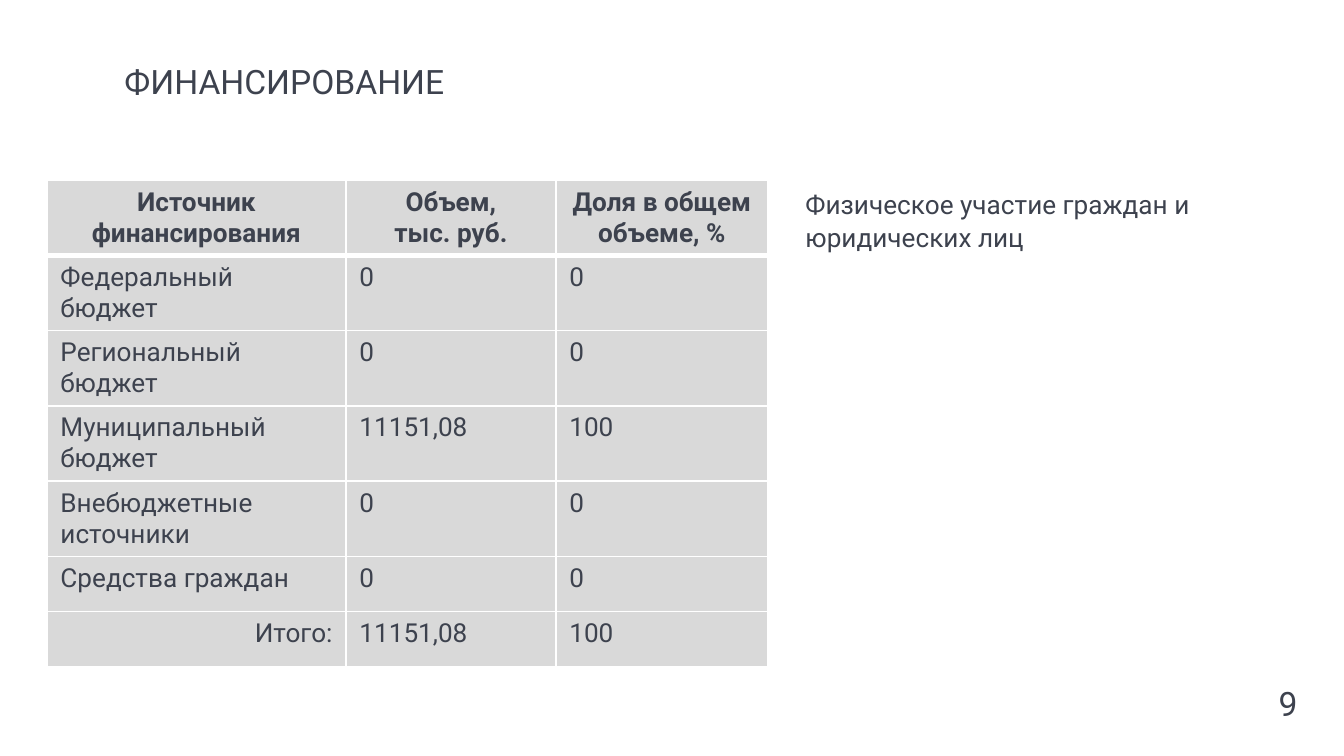
from dataclasses import dataclass

from lxml.etree import SubElement
from pptx import Presentation
from pptx.dml.color import RGBColor
from pptx.enum.text import MSO_ANCHOR as Anchor, MSO_AUTO_SIZE as AutoSize, PP_ALIGN as Align
from pptx.oxml.ns import qn
from pptx.util import Emu, Pt

PX = 914400 / 134.4


def px(n):
    return Emu(round(n * PX))


@dataclass(frozen=True)
class Theme:
    font: str = "Roboto"
    ink: str = "3D424E"
    cell: str = "D9D9D9"
    rule: str = "FFFFFF"
    title_size: int = 18
    body_size: int = 14
    thin: int = 1
    thick: int = 3


class SlideBuilder:
    def __init__(self, prs, theme):
        self.theme = theme
        self.s = prs.slides.add_slide(prs.slide_layouts[0])

    def format_text(self, tf, size, align=Align.LEFT, bold=False):
        for p in tf.paragraphs:
            p.alignment = align
            p.space_before = Pt(0)
            p.font.name = self.theme.font
            p.font.size = Pt(size)
            p.font.bold = bold
            p.font.color.rgb = RGBColor.from_string(self.theme.ink)

    def fill_frame(self, sp, text, box, size, anchor, align=Align.LEFT):
        sp.left, sp.top, sp.width, sp.height = map(px, box)
        tf = sp.text_frame
        tf.text = text
        tf.word_wrap = True
        tf.auto_size = AutoSize.NONE
        tf.vertical_anchor = anchor
        self.format_text(tf, size, align)
        return tf

    def title(self, text, box):
        self.fill_frame(self.s.shapes.title, text, box, self.theme.title_size, Anchor.MIDDLE)

    def body(self, text, box):
        tf = self.fill_frame(self.s.placeholders[1], text, box, self.theme.body_size, Anchor.TOP)
        tf.paragraphs[0].line_spacing = 1.05

    def page_number(self, text, box):
        sp = self.s.shapes.add_textbox(*map(px, box))
        self.fill_frame(sp, text, box, self.theme.title_size, Anchor.MIDDLE, Align.CENTER)

    def border(self, cell, side, width):
        ln = SubElement(cell._tc.get_or_add_tcPr(), qn(f"a:ln{side}"), w=str(Pt(width)))
        SubElement(SubElement(ln, qn("a:solidFill")), qn("a:srgbClr"), val=self.theme.rule)

    def table(self, rows, left, top, widths, row_height):
        t = self.theme
        frame = self.s.shapes.add_table(len(rows), len(widths), px(left), px(top),
                                        px(sum(widths)), px(row_height * len(rows)))
        table = frame.table
        table.horz_banding = False
        for column, width in zip(table.columns, widths):
            column.width = px(width)
        for i, row in enumerate(rows):
            for j, text in enumerate(row):
                cell = table.cell(i, j)
                cell.text = text
                for side in "LRTB":
                    under_header = (i, side) in ((0, "B"), (1, "T"))
                    self.border(cell, side, t.thick if under_header else t.thin)
                cell.fill.solid()
                cell.fill.fore_color.rgb = RGBColor.from_string(t.cell)
                is_total_label = i == len(rows) - 1 and j == 0
                align = Align.CENTER if i == 0 else Align.RIGHT if is_total_label else Align.LEFT
                self.format_text(cell.text_frame, t.body_size, align, bold=i == 0)


FUNDING = [
    ("Источник финансирования", "Объем,\nтыс. руб.", "Доля в общем объеме, %"),
    ("Федеральный бюджет", "0", "0"),
    ("Региональный бюджет", "0", "0"),
    ("Муниципальный бюджет", "11151,08", "100"),
    ("Внебюджетные источники", "0", "0"),
    ("Средства граждан", "0", "0"),
    ("Итого:", "11151,08", "100"),
]


def main():
    prs = Presentation()
    prs.slide_width, prs.slide_height = px(1344), px(756)
    slide = SlideBuilder(prs, Theme())
    slide.title("ФИНАНСИРОВАНИЕ", (111, 28, 1132, 106))
    slide.body("Физическое участие граждан и юридических лиц", (792, 180, 504, 527))
    slide.table(FUNDING, 47, 180, (299, 210, 212), 55)
    slide.page_number("9", (1232, 650, 112, 106))
    prs.save("out.pptx")


if __name__ == "__main__":
    main()
